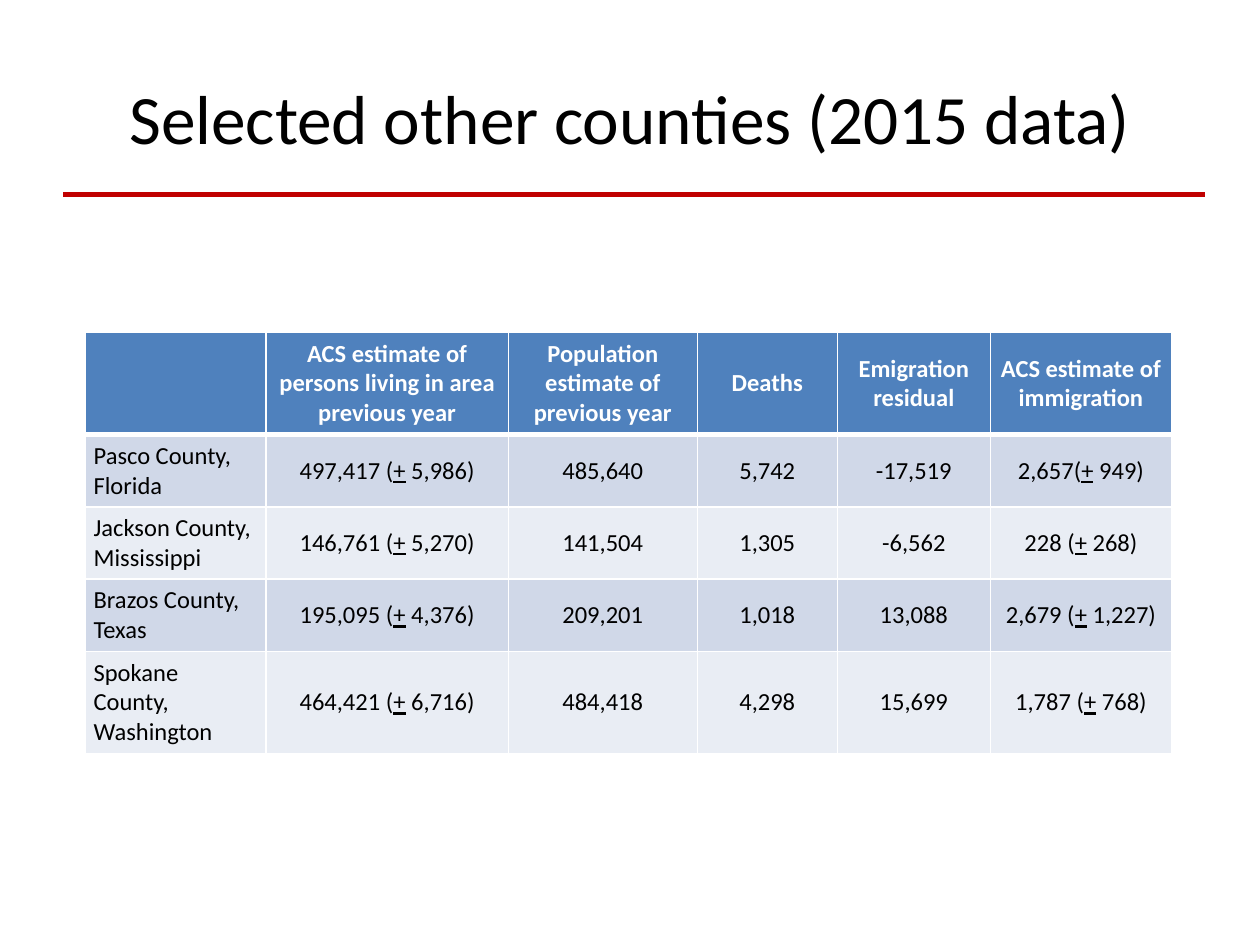
from dataclasses import dataclass

from lxml import etree
from pptx import Presentation
from pptx.dml.color import RGBColor
from pptx.enum import shapes, text
from pptx.oxml import ns
from pptx.util import Pt


@dataclass(frozen=True)
class Theme:
    font: str = "Calibri"
    title_size: float = 39.6
    table_size: float = 14
    ink: str = "000000"
    paper: str = "FFFFFF"
    rule: str = "C00000"
    header: str = "4F81BD"
    bands: tuple = ("D0D8E8", "E9EDF4")


THEME = Theme()
COLUMN_WIDTHS = (103.5, 138.5, 108, 80, 87.5, 103.5)
ROW_HEIGHTS = (57.6, 41.2, 41.2, 41.2, 58)
ROWS = (
    ("", "ACS estimate of persons living in area previous year",
     "Population estimate of previous year", "Deaths", "Emigration residual",
     "ACS estimate of immigration"),
    ("Pasco County, Florida", "497,417 (+ 5,986)", "485,640", "5,742",
     "-17,519", "2,657(+ 949)"),
    ("Jackson County, Mississippi", "146,761 (+ 5,270)", "141,504", "1,305",
     "-6,562", "228 (+ 268)"),
    ("Brazos County, Texas", "195,095 (+ 4,376)", "209,201", "1,018",
     "13,088", "2,679 (+ 1,227)"),
    ("Spokane County, Washington", "464,421 (+ 6,716)", "484,418", "4,298",
     "15,699", "1,787 (+ 768)"),
)


def add_run(p, words, size, color, bold=False, underline=False):
    r = p.add_run()
    r.text = words
    r.font.name = THEME.font
    r.font.size = Pt(size)
    r.font.bold = bold
    r.font.underline = underline
    r.font.color.rgb = RGBColor.from_string(color)


def set_borders(cell, bottom):
    tcPr = cell._tc.get_or_add_tcPr()
    widths = {"lnL": 1, "lnR": 1, "lnT": 1, "lnB": bottom}
    # Borders come before the fill in the cell properties
    for i, (side, width) in enumerate(widths.items()):
        ln = etree.Element(ns.qn(f"a:{side}"), w=str(Pt(width)))
        fill = etree.SubElement(ln, ns.qn("a:solidFill"))
        etree.SubElement(fill, ns.qn("a:srgbClr"), val=THEME.paper)
        tcPr.insert(i, ln)


def add_title(s, x, y, w, h):
    sp = s.shapes.title
    sp.left, sp.top, sp.width, sp.height = Pt(x), Pt(y), Pt(w), Pt(h)
    tf = sp.text_frame
    tf.word_wrap = True
    tf.vertical_anchor = text.MSO_ANCHOR.MIDDLE
    p = tf.paragraphs[0]
    p.alignment = text.PP_ALIGN.CENTER
    add_run(p, "Selected other counties (2015 data)", THEME.title_size, THEME.ink)


def add_rule(s, x, y, w):
    line = s.shapes.add_connector(
        shapes.MSO_CONNECTOR.STRAIGHT, Pt(x), Pt(y), Pt(x + w), Pt(y))
    line.line.color.rgb = RGBColor.from_string(THEME.rule)
    line.line.width = Pt(3)
    etree.SubElement(line._element.spPr, ns.qn("a:effectLst"))


def fill_cell(cell, words, row, col):
    is_header = row == 0
    cell.fill.solid()
    cell.fill.fore_color.rgb = RGBColor.from_string(
        THEME.header if is_header else THEME.bands[(row - 1) % 2])
    set_borders(cell, bottom=3 if is_header else 1)
    cell.vertical_anchor = text.MSO_ANCHOR.MIDDLE
    cell.margin_left = cell.margin_right = Pt(5)
    cell.margin_top = cell.margin_bottom = Pt(3.6)
    p = cell.text_frame.paragraphs[0]
    if is_header or col > 0:
        p.alignment = text.PP_ALIGN.CENTER
    color = THEME.paper if is_header else THEME.ink
    # An underlined plus stands for plus or minus
    for part in words.partition("+"):
        if part:
            add_run(p, part, THEME.table_size, color, is_header, part == "+")


def add_county_table(s, x, y, w, h):
    frame = s.shapes.add_table(
        len(ROWS), len(COLUMN_WIDTHS), Pt(x), Pt(y), Pt(w), Pt(h))
    table = frame.table
    for column, width in zip(table.columns, COLUMN_WIDTHS):
        column.width = Pt(w * width / sum(COLUMN_WIDTHS))
    for row, height in zip(table.rows, ROW_HEIGHTS):
        row.height = Pt(h * height / sum(ROW_HEIGHTS))
    for i, row in enumerate(ROWS):
        for j, words in enumerate(row):
            fill_cell(table.cell(i, j), words, i, j)


def main():
    prs = Presentation()
    prs.slide_width, prs.slide_height = Pt(720), Pt(540)
    s = prs.slides.add_slide(prs.slide_layouts[5])
    add_rule(s, 36, 111, 652.5)
    add_title(s, 36, 21.6, 648, 90)
    add_county_table(s, 48.5, 190, 621, 239.2)
    prs.save("out.pptx")


if __name__ == "__main__":
    main()
